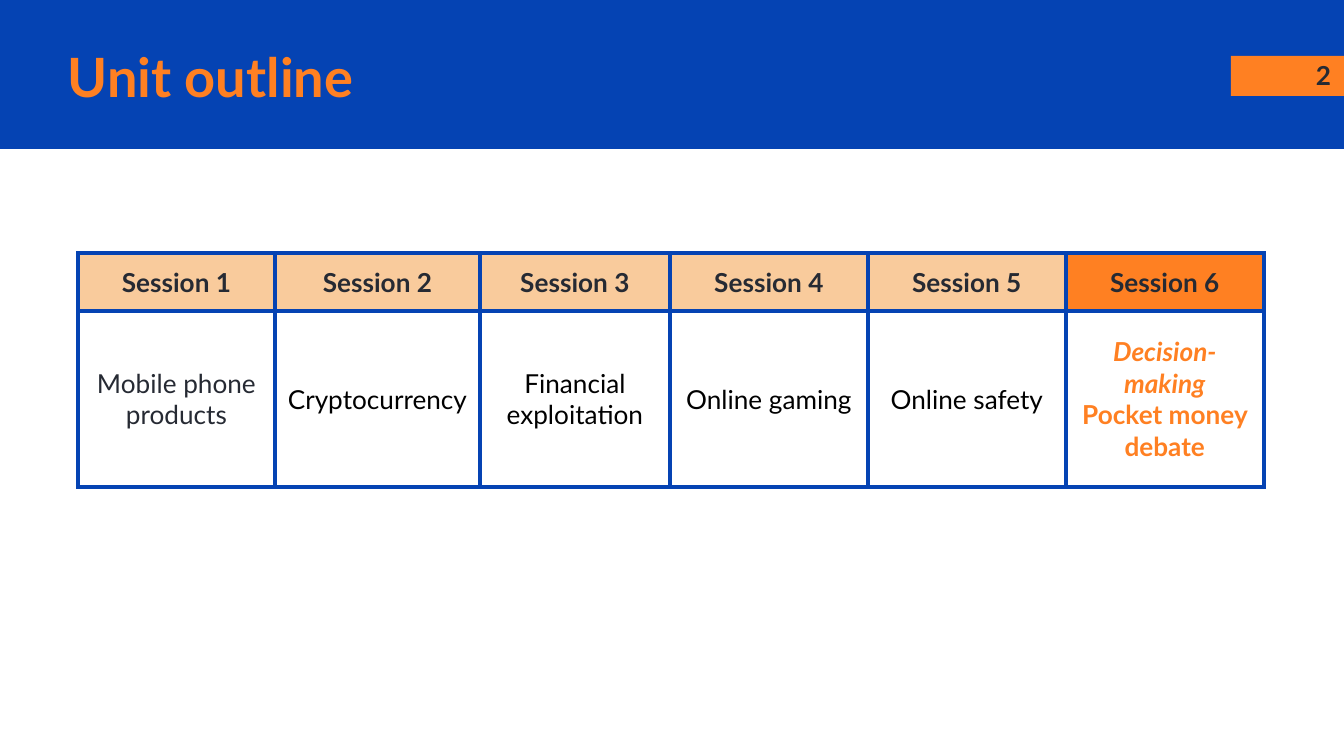
import dataclasses

import lxml.etree
import pptx
import pptx.dml.color
import pptx.enum.shapes
import pptx.enum.text
import pptx.oxml.ns
import pptx.util

EMU_PER_PX = 914400 / 134.4
FONT = "Lato"
COLORS = {
    "blue": "0543B3",
    "orange": "FF8022",
    "peach": "F9CB9C",
    "ink": "262A33",
    "black": "000000",
}
ALIGN = pptx.enum.text.PP_ALIGN
MIDDLE = pptx.enum.text.MSO_ANCHOR.MIDDLE


@dataclasses.dataclass(frozen=True)
class Box:
    left: int
    top: int
    width: int
    height: int


@dataclasses.dataclass(frozen=True)
class Line:
    text: str
    color: str = "ink"
    size: int = 14
    bold: bool = False
    italic: bool = False


@dataclasses.dataclass(frozen=True)
class Session:
    width: int
    header_fill: str
    topic: tuple[Line, ...]


SESSIONS = (
    Session(197, "peach", (Line("Mobile phone products"),)),
    Session(205, "peach", (Line("Cryptocurrency", "black"),)),
    Session(190, "peach", (Line("Financial exploitation", "black"),)),
    Session(198, "peach", (Line("Online gaming", "black"),)),
    Session(198, "peach", (Line("Online safety", "black"),)),
    Session(198, "orange", (
        Line("Decision-", "orange", bold=True, italic=True),
        Line("making", "orange", bold=True, italic=True),
        Line("Pocket money debate", "orange", bold=True),
    )),
)
ROW_HEIGHTS = (58, 176)


def px(length: int) -> pptx.util.Emu:
    return pptx.util.Emu(round(length * EMU_PER_PX))


def rgb(name: str) -> pptx.dml.color.RGBColor:
    return pptx.dml.color.RGBColor.from_string(COLORS[name])


def place(box: Box) -> tuple[pptx.util.Emu, ...]:
    return px(box.left), px(box.top), px(box.width), px(box.height)


def set_margins(holder, margin: int) -> None:
    holder.margin_left = holder.margin_right = px(margin)
    holder.margin_top = holder.margin_bottom = px(margin)
    holder.vertical_anchor = MIDDLE


def write_lines(text_frame, lines: tuple[Line, ...], alignment) -> None:
    for index, line in enumerate(lines):
        paragraph = text_frame.paragraphs[0] if index == 0 else text_frame.add_paragraph()
        paragraph.text = line.text
        paragraph.alignment = alignment
        font = paragraph.font
        font.name = FONT
        font.size = pptx.util.Pt(line.size)
        font.bold = line.bold
        font.italic = line.italic
        font.color.rgb = rgb(line.color)


def add_rectangle(slide, box: Box, color: str) -> None:
    shape = slide.shapes.add_shape(pptx.enum.shapes.MSO_SHAPE.RECTANGLE, *place(box))
    shape.shadow.inherit = False
    shape.fill.solid()
    shape.fill.fore_color.rgb = rgb(color)
    shape.line.fill.background()


def add_text(slide, box: Box, line: Line, alignment) -> None:
    text_frame = slide.shapes.add_textbox(*place(box)).text_frame
    text_frame.word_wrap = True
    set_margins(text_frame, 13)
    write_lines(text_frame, (line,), alignment)


def set_borders(cell, color: str, points: float) -> None:
    qn = pptx.oxml.ns.qn
    properties = cell._tc.get_or_add_tcPr()
    for index, side in enumerate(("lnL", "lnR", "lnT", "lnB")):
        border = lxml.etree.Element(qn(f"a:{side}"), w=str(pptx.util.Pt(points)))
        fill = lxml.etree.SubElement(border, qn("a:solidFill"))
        lxml.etree.SubElement(fill, qn("a:srgbClr"), val=COLORS[color])
        properties.insert(index, border)


def fill_cell(cell, lines: tuple[Line, ...], margin: int, color: str | None = None) -> None:
    set_margins(cell, margin)
    write_lines(cell.text_frame, lines, ALIGN.CENTER)
    if color:
        cell.fill.solid()
        cell.fill.fore_color.rgb = rgb(color)
    else:
        cell.fill.background()
    set_borders(cell, "blue", 2.25)


def add_session_table(slide, left: int, top: int) -> None:
    box = Box(left, top, sum(session.width for session in SESSIONS), sum(ROW_HEIGHTS))
    table = slide.shapes.add_table(len(ROW_HEIGHTS), len(SESSIONS), *place(box)).table
    table.first_row = False
    table.horz_banding = False
    for row, height in zip(table.rows, ROW_HEIGHTS):
        row.height = px(height)
    for index, session in enumerate(SESSIONS):
        table.columns[index].width = px(session.width)
        header = Line(f"Session {index + 1}", bold=True)
        fill_cell(table.cell(0, index), (header,), 13, session.header_fill)
        fill_cell(table.cell(1, index), session.topic, 9)


def main() -> None:
    presentation = pptx.Presentation()
    presentation.slide_width = px(1344)
    presentation.slide_height = px(756)
    slide = presentation.slides.add_slide(presentation.slide_layouts[6])
    add_rectangle(slide, Box(0, 0, 1344, 149), "blue")
    add_rectangle(slide, Box(1231, 56, 113, 40), "orange")
    add_text(slide, Box(1263, 46, 81, 58), Line("2", bold=True), ALIGN.RIGHT)
    add_text(slide, Box(55, 38, 1137, 75), Line("Unit outline", "orange", 29, True), ALIGN.LEFT)
    add_session_table(slide, 78, 253)
    presentation.save("out.pptx")


if __name__ == "__main__":
    main()
